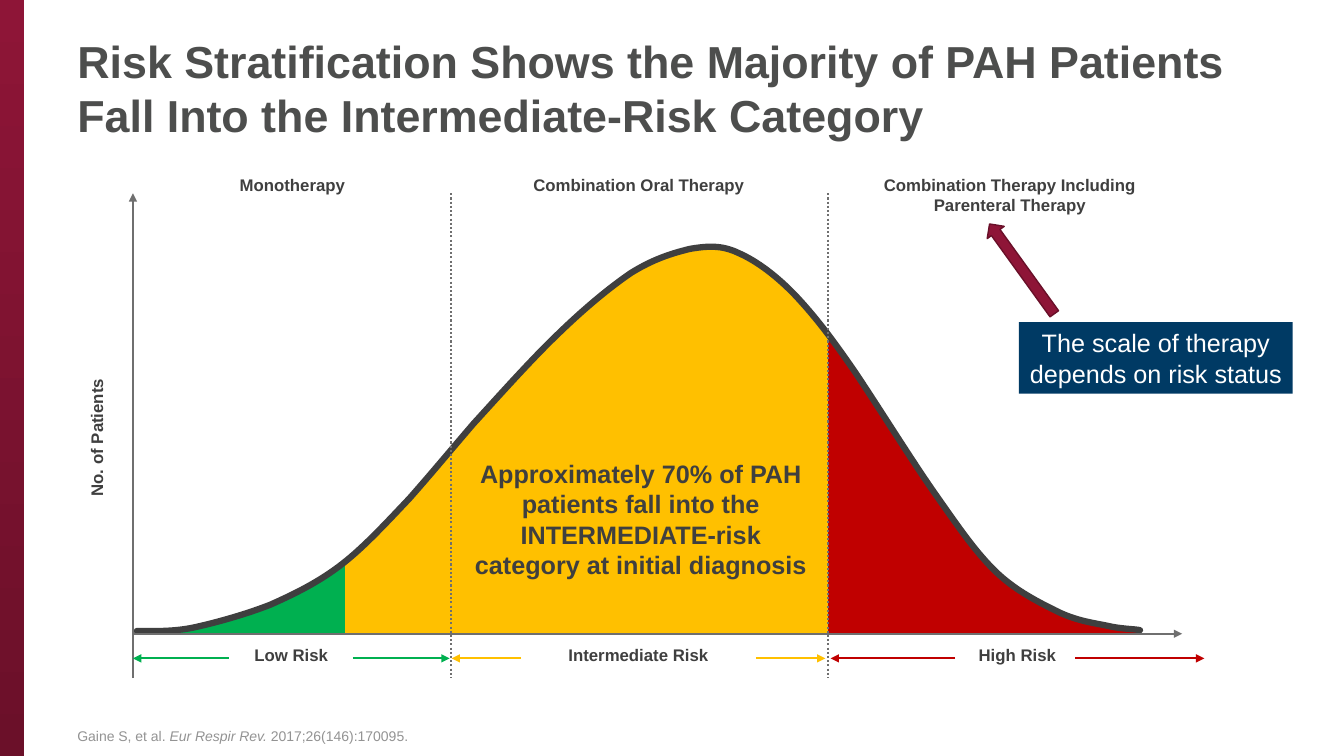
"""Build the slide on risk groups and therapy in PAH."""
from dataclasses import dataclass
from typing import Any, NamedTuple

from lxml import etree
from pptx import Presentation
from pptx.dml.color import RGBColor
from pptx.enum.dml import MSO_LINE
from pptx.enum.shapes import MSO_CONNECTOR, MSO_SHAPE
from pptx.enum.text import MSO_ANCHOR, MSO_AUTO_SIZE, PP_ALIGN
from pptx.oxml.ns import qn
from pptx.util import Cm, Pt

LEFT, MID = PP_ALIGN.LEFT, PP_ALIGN.CENTER
TOP, CORE, LOW = MSO_ANCHOR.TOP, MSO_ANCHOR.MIDDLE, MSO_ANCHOR.BOTTOM
NONE, DOTS = MSO_AUTO_SIZE.NONE, MSO_LINE.ROUND_DOT
RECT, ARROW = MSO_SHAPE.RECTANGLE, MSO_SHAPE.UP_ARROW
STRAIGHT = MSO_CONNECTOR.STRAIGHT


@dataclass(frozen=True)
class Theme:
    face: str = "Arial"
    title: str = "4D4E4D"
    ink: str = "3F3F3F"
    note: str = "939393"
    axis: str = "6F6F6F"
    wine: str = "8E1537"
    dark: str = "6B1029"
    edge: str = "691029"
    navy: str = "003A64"
    white: str = "FFFFFF"
    green: str = "00B050"
    gold: str = "FFC000"
    red: str = "C00000"
    head: int = 32
    body: int = 18
    label: int = 12
    small: int = 10


class Box(NamedTuple):
    left: float
    top: float
    width: float
    height: float


class Point(NamedTuple):
    x: float
    y: float


@dataclass(frozen=True)
class Band:
    name: str
    therapy: str
    centre: float
    hue: str
    span: tuple[float, float]
    gap: tuple[float, float]
    area: tuple[float, float]


@dataclass(frozen=True)
class Label:
    text: str
    box: Box
    size: int
    pad: tuple[float, float] = (0.25, 0.13)
    turn: float = 0


T = Theme()
BASE = 15.97
BANDS = (
    Band("Low Risk", "Monotherapy", 7.37, T.green,
         (3.35, 11.33), (5.77, 8.89), (3.46, 8.76)),
    Band("Intermediate Risk", "Combination Oral Therapy", 16.1, T.gold,
         (11.38, 20.8), (13.13, 19.05), (8.7, 20.87)),
    Band("High Risk", "Combination Therapy Including\vParenteral Therapy", 25.45, T.red,
         (20.93, 30.35), (24.07, 27.1), (20.87, 28.65)),
)
KNOTS = [Point(*pair) for pair in (
    (3.45, 15.9),
    (3.73, 15.9), (4.29, 15.93), (4.85, 15.82),
    (5.41, 15.7), (6.17, 15.49), (6.81, 15.24),
    (7.44, 14.96), (8.05, 14.66), (8.64, 14.2),
    (9.19, 13.77), (9.75, 13.16), (10.31, 12.57),
    (10.85, 11.96), (11.33, 11.38), (11.94, 10.67),
    (12.57, 9.98), (13.41, 9.04), (14.07, 8.41),
    (14.73, 7.77), (15.37, 7.24), (15.9, 6.88),
    (16.46, 6.53), (16.94, 6.38), (17.4, 6.27),
    (17.83, 6.2), (18.19, 6.17), (18.62, 6.38),
    (19.08, 6.58), (19.58, 6.96), (20.04, 7.44),
    (20.52, 7.95), (20.93, 8.48), (21.51, 9.32),
    (22.1, 10.19), (23.01, 11.66), (23.62, 12.52),
    (24.21, 13.36), (24.61, 13.94), (25.12, 14.43),
    (25.63, 14.91), (26.21, 15.19), (26.67, 15.42),
    (27.15, 15.65), (27.58, 15.7), (27.91, 15.77),
    (28.24, 15.85), (28.6, 15.85), (28.73, 15.88),
)]


def rgb(hue: str) -> RGBColor:
    return RGBColor.from_string(hue)


def apply(item: Any, form: dict[str, Any]) -> None:
    for key, value in form.items():
        setattr(item, key, value)


def write(shape: Any, parts: list[tuple[str, bool]], size: int, hue: str, bold: bool = False,
          align: Any = MID, anchor: Any = TOP, pad: tuple[float, float] = (0.25, 0.13)) -> None:
    side, edge = map(Cm, pad)
    frame = shape.text_frame
    apply(frame, {"word_wrap": True, "auto_size": NONE, "vertical_anchor": anchor,
                  "margin_left": side, "margin_right": side,
                  "margin_top": edge, "margin_bottom": edge})
    para = frame.paragraphs[0]
    para.alignment = align
    for index, (text, slant) in enumerate(parts):
        if index:
            para.add_run().text = text
        else:
            para.text = text
        for run in para.runs[index:]:
            apply(run.font, {"name": T.face, "size": Pt(size), "bold": bold, "italic": slant})
            run.font.color.rgb = rgb(hue)


def frame(slide: Any, box: Box) -> Any:
    return slide.shapes.add_textbox(*map(Cm, box))


def paint(shape: Any, hue: str) -> None:
    shape.shadow.inherit = False
    shape.fill.solid()
    shape.fill.fore_color.rgb = rgb(hue)
    shape.line.fill.background()


def block(slide: Any, kind: Any, box: Box, hue: str) -> Any:
    shape = slide.shapes.add_shape(kind, *map(Cm, box))
    paint(shape, hue)
    return shape


def rule(slide: Any, start: Point, end: Point, hue: str, tip: bool = True) -> None:
    link = slide.shapes.add_connector(STRAIGHT, *map(Cm, (*start, *end)))
    link.line.color.rgb = rgb(hue)
    link.line.width = Pt(1.5)
    if tip:
        etree.SubElement(link.line._get_or_add_ln(), qn("a:tailEnd"), type="triangle")
    else:
        link.line.dash_style = DOTS
    etree.SubElement(link._element.spPr, qn("a:effectLst"))


def split(arc: list[Point], x: float) -> tuple[list[Point], list[Point]]:
    low, high = 0.0, 1.0
    for _ in range(30):
        t = (low + high) / 2
        row, left, right = arc, [arc[0]], [arc[-1]]
        while len(row) > 1:
            row = [Point(a.x + (b.x - a.x) * t, a.y + (b.y - a.y) * t)
                   for a, b in zip(row, row[1:])]
            left.append(row[0])
            right.insert(0, row[-1])
        low, high = (t, high) if row[0].x < x else (low, t)
    return left, right


def clip(a: float, b: float) -> list[Point]:
    dots: list[Point] = []
    for i in range(0, len(KNOTS) - 1, 3):
        arc = KNOTS[i:i + 4]
        if arc[-1].x <= a or arc[0].x >= b:
            continue
        if arc[0].x < a:
            arc = split(arc, a)[1]
        if arc[-1].x > b:
            arc = split(arc, b)[0]
        dots += arc[1:] if dots else arc
    return dots


def outline(slide: Any, lead: list[Point], dots: list[Point]) -> Any:
    pairs = [(Cm(x), Cm(y)) for x, y in lead + dots]
    pen = slide.shapes.build_freeform(*pairs[0])
    pen.add_line_segments(pairs[1:], close=bool(lead))
    shape = pen.convert_to_shape()
    lines = list(shape._element.iter(qn("a:lnTo")))[len(lead):]
    for trio in zip(lines[::3], lines[1::3], lines[2::3]):
        bend = etree.Element(qn("a:cubicBezTo"))
        trio[0].addprevious(bend)
        for line in trio:
            bend.append(line[0])
            line.getparent().remove(line)
    return shape


def plot(slide: Any) -> None:
    for band in BANDS:
        a, b = band.area
        paint(outline(slide, [Point(b, BASE), Point(a, BASE)], clip(a, b)), band.hue)
    curve = outline(slide, [], KNOTS)
    curve.shadow.inherit = False
    curve.fill.background()
    curve.line.color.rgb = rgb(T.ink)
    curve.line.width = Pt(4.5)
    curve.line._get_or_add_ln().set("cap", "rnd")
    rule(slide, Point(3.35, BASE), Point(29.79, BASE), T.axis)
    rule(slide, Point(3.35, 17.09), Point(3.35, 4.87), T.axis)
    for x in (11.36, 20.86):
        rule(slide, Point(x, 4.87), Point(x, 17.09), T.axis, False)


def main() -> None:
    deck = Presentation()
    apply(deck, {"slide_width": Cm(33.87), "slide_height": Cm(19.05)})
    slide = deck.slides.add_slide(deck.slide_layouts[5])
    title = slide.shapes.title
    apply(title, dict(zip(Box._fields, map(Cm, (1.7, 0.56, 29.85, 3.3)))))
    write(title, [("Risk Stratification Shows the Majority of PAH Patients "
                   "Fall Into the Intermediate-Risk Category", False)],
          T.head, T.title, True, LEFT, CORE)
    bar = block(slide, RECT, Box(0, 0, 0.61, 19.05), T.wine)
    bar.fill.gradient()
    bar.fill.gradient_angle = 270
    for stop, hue in zip(bar.fill.gradient_stops, (T.wine, T.dark)):
        stop.color.rgb = rgb(hue)
    write(frame(slide, Box(1.7, 17.67, 29.85, 1.22)),
          [("Gaine S, et al. ", False), ("Eur Respir Rev. ", True),
           ("2017;26(146):170095.", False)], T.small, T.note, align=LEFT, anchor=LOW)
    plot(slide)
    labels = [Label("No. of Patients", Box(-2.57, 10.77, 10, 0.51), T.label, (0, 0), 270),
              Label("Approximately 70% of PAH patients fall into the INTERMEDIATE-risk "
                    "category at initial diagnosis", Box(11.69, 11.42, 8.92, 3.33), T.body)]
    for band in BANDS:
        a, b = band.span
        labels += [Label(band.therapy, Box(band.centre - 4.4, 4.27, 8.8, 1.3), T.label),
                   Label(band.name, Box(a, 16.24, b - a, 0.51), T.label, (0, 0))]
        for inner, outer in zip(band.gap, band.span):
            rule(slide, Point(inner, 16.59), Point(outer, 16.59), band.hue)
    for label in labels:
        box = frame(slide, label.box)
        box.rotation = label.turn
        write(box, [(label.text, False)], label.size, T.ink, True, pad=label.pad)
    call = block(slide, RECT, Box(25.68, 8.12, 6.9, 1.8), T.navy)
    write(call, [("The scale of therapy depends on risk status", False)],
          T.body, T.white, anchor=CORE, pad=(0.2, 0.13))
    arrow = block(slide, ARROW, Box(25.49, 5.38, 0.53, 2.79), T.wine)
    arrow.rotation = 324.2
    arrow.line.color.rgb = rgb(T.edge)
    arrow.line.width = Pt(1)
    deck.save("out.pptx")


if __name__ == "__main__":
    main()
